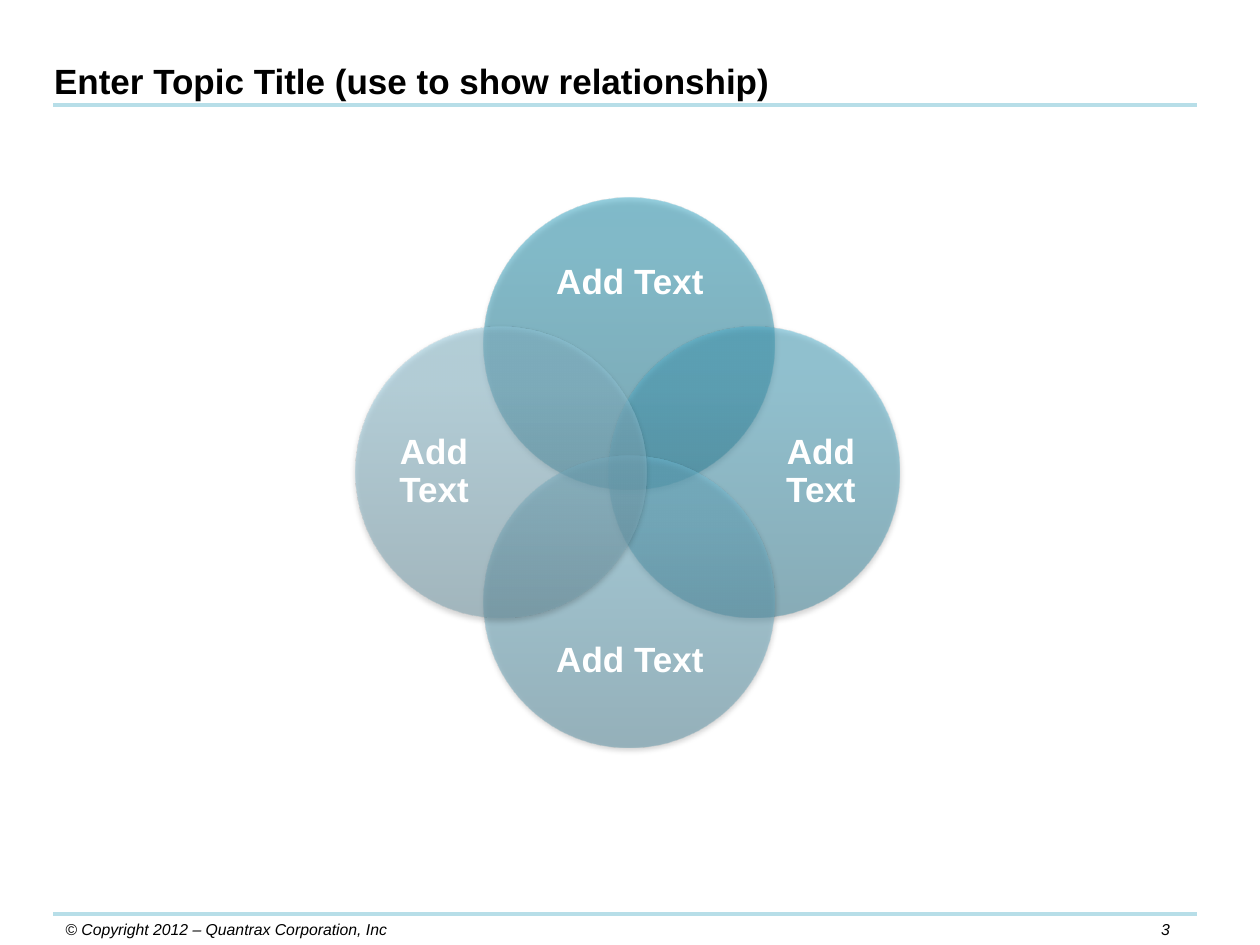
"""Build a topic slide with four overlapping circles."""
from dataclasses import dataclass

from lxml import etree
from pptx import Presentation, util as u
from pptx.dml.color import RGBColor
from pptx.enum import shapes, text
from pptx.oxml.ns import qn


@dataclass(frozen=True)
class Theme:
    """Hold the colours, font and type sizes."""
    ink: str = "000000"
    pale: str = "FFFFFF"
    rule: str = "B7DEE8"
    top: tuple = ("267C93", "32A1BE", "2FA3C2")
    right: tuple = ("3E869C", "50AECA", "4EB0CD")
    low: tuple = ("588FA2", "72BAD2", "71BCD5")
    left: tuple = ("729AA8", "94C8DB", "93C9DD")
    font: str = "Arial"
    head: int = 20
    foot: int = 9


def tint(node, color, alpha):
    """Add a colour with an opacity in percent to an XML node."""
    clr = etree.SubElement(node, qn("a:srgbClr"), val=color)
    etree.SubElement(clr, qn("a:alpha"), val=str(alpha * 1000))


class Deck:
    """Draw elements on the current slide in one style."""

    def __init__(self, theme):
        """Open a deck with one blank slide."""
        self.theme = theme
        self.prs = Presentation()
        self.prs.slide_width, self.prs.slide_height = u.Cm(25.4), u.Cm(19.05)
        self.slide = self.prs.slides.add_slide(self.prs.slide_layouts[6])

    def rule(self, x, y, end):
        """Draw a horizontal rule."""
        line = self.slide.shapes.add_connector(
            shapes.MSO_CONNECTOR.STRAIGHT, u.Cm(x), u.Cm(y), u.Cm(end), u.Cm(y))
        line.line.color.rgb = RGBColor.from_string(self.theme.rule)
        line.line.width = u.Pt(2.25)
        etree.SubElement(line._element.spPr, qn("a:effectLst"))

    def text(self, words, box, size, color, bold=False, slant=False, mid=False):
        """Add a text box and return its frame."""
        frame = self.slide.shapes.add_textbox(*map(u.Cm, box)).text_frame
        frame.word_wrap = True
        frame.text = words
        para = frame.paragraphs[0]
        para.alignment = text.PP_ALIGN.CENTER if mid else text.PP_ALIGN.LEFT
        font = para.runs[0].font
        font.name, font.size = self.theme.font, u.Pt(size)
        font.bold, font.italic = bold, slant
        font.color.rgb = RGBColor.from_string(color)
        return frame

    def label(self, words, box):
        """Add a centred label without margins."""
        frame = self.text(words, box, self.theme.head, self.theme.pale,
                          bold=True, mid=True)
        frame.margin_left = frame.margin_right = 0
        frame.margin_top = frame.margin_bottom = 0
        frame.vertical_anchor = text.MSO_ANCHOR.MIDDLE
        frame.paragraphs[0].line_spacing = 0.9

    def circle(self, x, y, size, stops):
        """Draw a see-through shaded circle with a soft shadow."""
        disc = self.slide.shapes.add_shape(
            shapes.MSO_SHAPE.OVAL, u.Cm(x), u.Cm(y), u.Cm(size), u.Cm(size))
        disc.line.fill.background()
        disc.fill.gradient()
        disc.fill.gradient_angle = 90
        disc.shadow.inherit = False
        props = disc._element.spPr
        ramp = props.find(qn("a:gradFill")).find(qn("a:gsLst"))
        for old in list(ramp):
            ramp.remove(old)
        for pos, color in zip((0, 80, 100), stops):
            tint(etree.SubElement(ramp, qn("a:gs"), pos=str(pos * 1000)), color, 50)
        shade = etree.SubElement(
            props.find(qn("a:effectLst")), qn("a:outerShdw"), blurRad="40000",
            dist="23000", dir="5400000", rotWithShape="0")
        tint(shade, self.theme.ink, 35)


def main():
    """Build and save the slide."""
    theme = Theme()
    deck = Deck(theme)
    for y in (2.11, 18.42):
        deck.rule(1.07, y, 24.13)
    deck.text("3", (22.86, 18.42, 1.27, 0.64), theme.foot, theme.ink,
              slant=True, mid=True)
    deck.text("© Copyright 2012 – Quantrax Corporation, Inc",
              (1.07, 18.42, 8.26, 0.64), theme.foot, theme.ink, slant=True)

    wide, tall = (4.52, 1.85), (2.26, 4.52)
    petals = (
        (9.75, 3.99, theme.top, (10.44, 4.78, *wide)),
        (12.27, 6.58, theme.right, (15.42, 7.26, *tall)),
        (9.75, 9.19, theme.low, (10.44, 12.4, *wide)),
        (7.16, 6.58, theme.left, (7.62, 7.26, *tall)),
    )
    for x, y, stops, box in petals:
        deck.circle(x, y, 5.87, stops)
        deck.label("Add Text", box)

    deck.text("Enter Topic Title (use to show relationship)",
              (0.84, 1.07, 16.94, 1.12), theme.head, theme.ink, bold=True)
    deck.prs.save("out.pptx")


if __name__ == "__main__":
    main()
